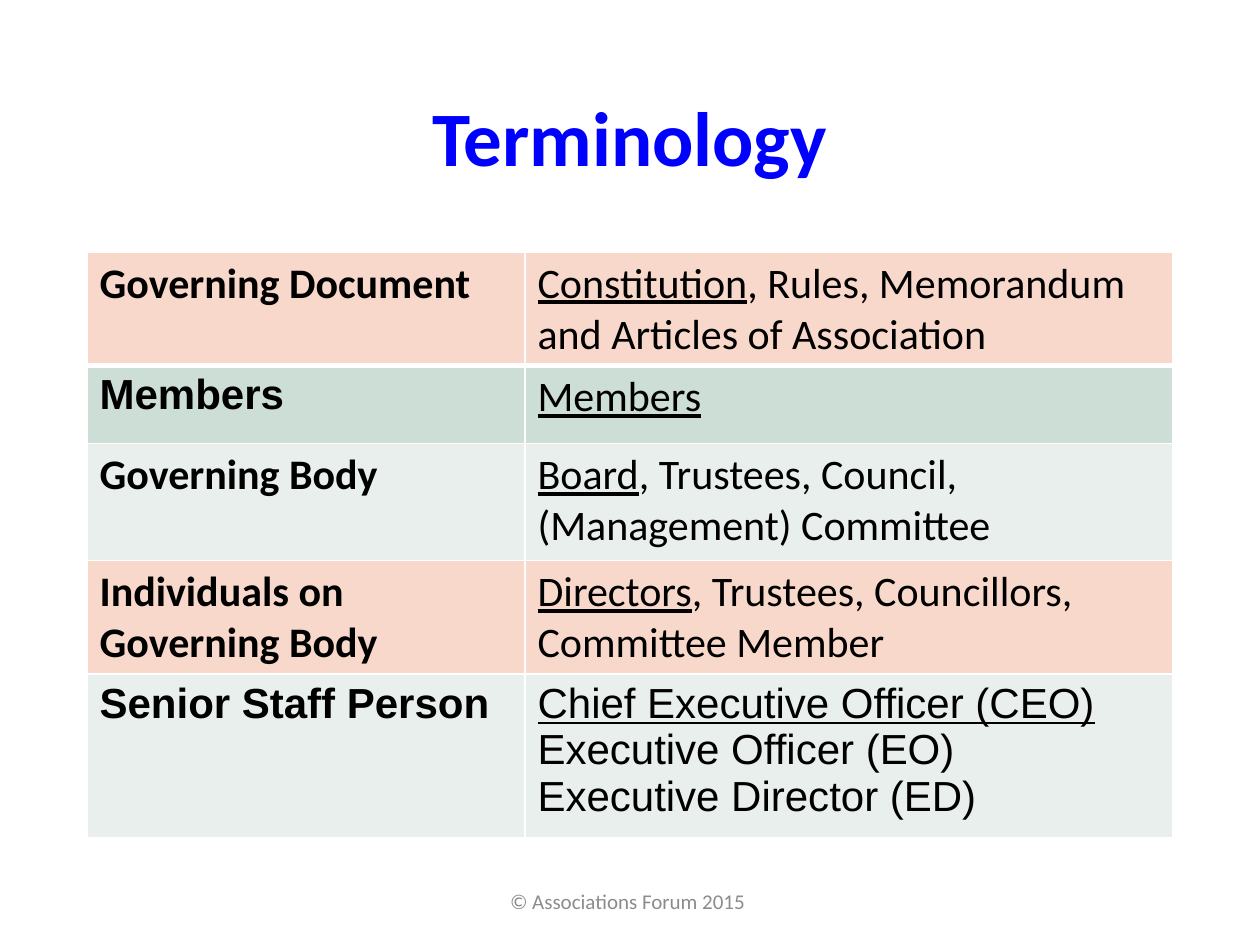
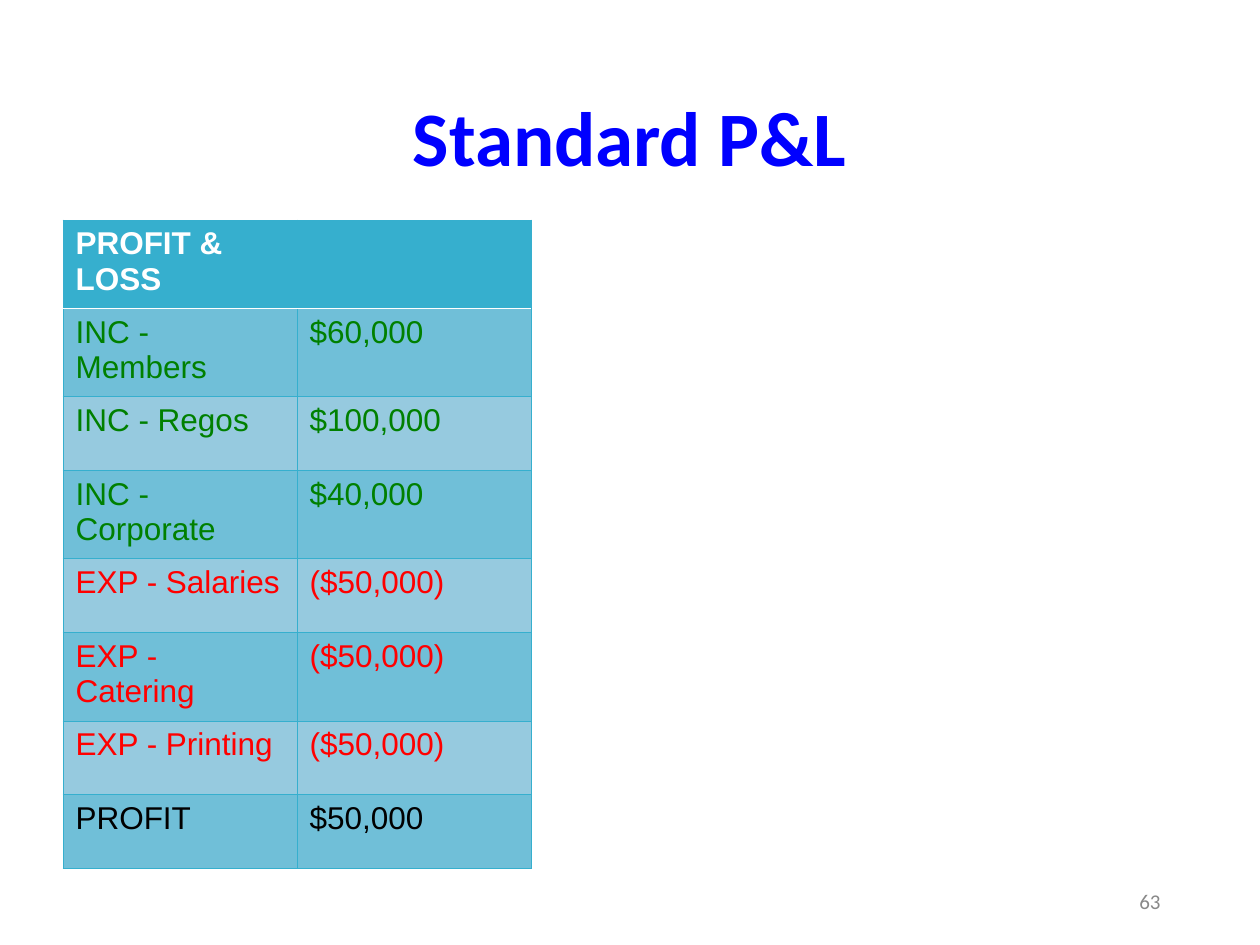
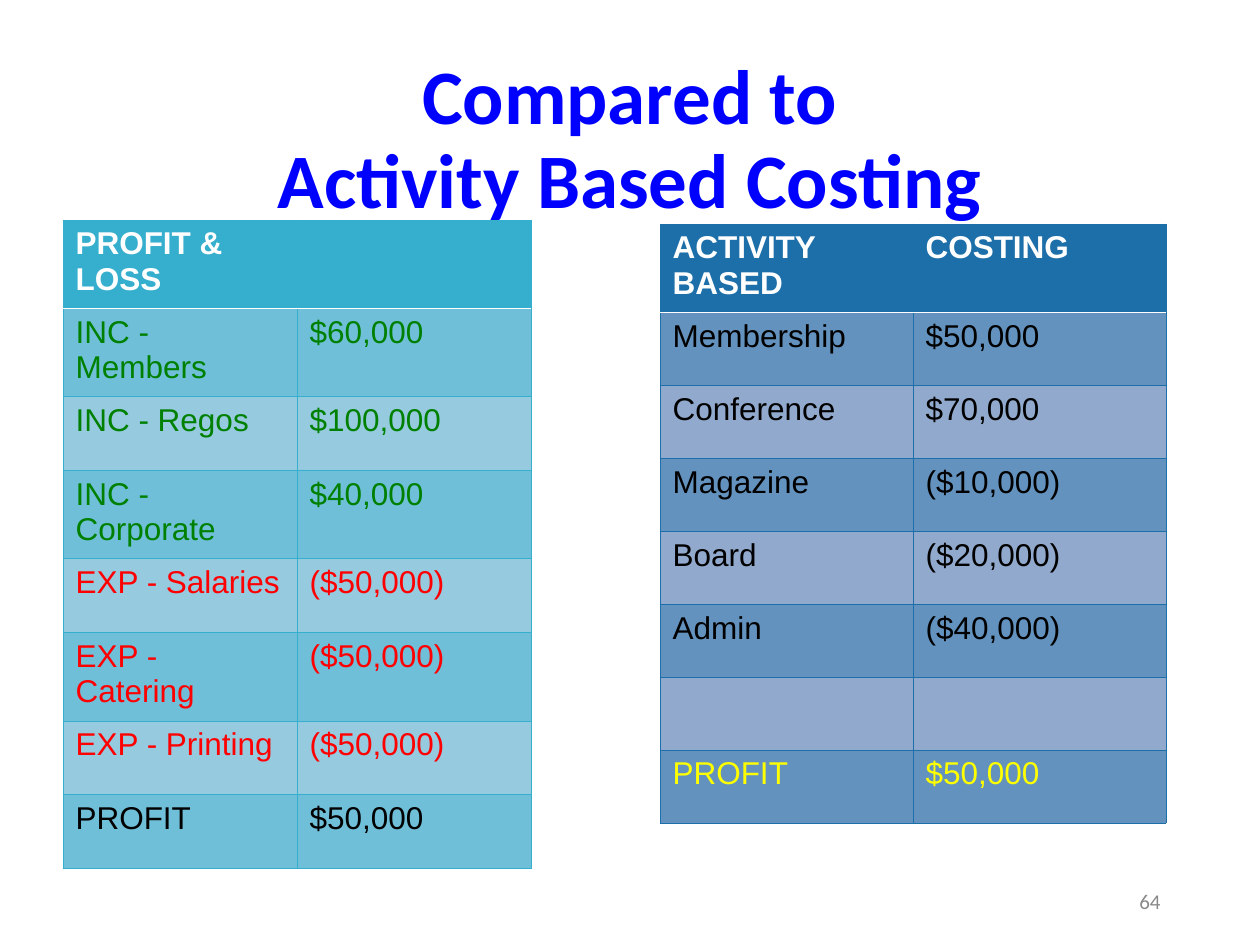
"""Builds three slides on association terminology and activity based costing."""
from dataclasses import dataclass

from lxml.etree import SubElement
from pptx import Presentation
from pptx.dml.color import RGBColor as RGB
from pptx.enum.text import MSO_ANCHOR as ANCHOR, PP_ALIGN as ALIGN
from pptx.oxml.ns import qn
from pptx.util import Emu, Pt

PX_PER_INCH = 126


@dataclass(frozen=True)
class Theme:
    title: str = "0000FF"
    text: str = "000000"
    white: str = "FFFFFF"
    copyright: str = "8C8C8C"
    number: str = "898989"
    income: str = "008000"
    expense: str = "FF0000"
    profit: str = "FFFF00"
    peach: str = "F8D8CA"
    sage: str = "CDDED6"
    mist: str = "E8EFEC"
    teal: tuple = ("36AFCE", "70BFD8", "96CADF")
    blue: tuple = ("1D6FA9", "6392BE", "91A9CC")
    head_font: str = "Calibri"
    body_font: str = "Arial"
    title_size: int = 44
    term_size: int = 24
    money_size: int = 18
    footer_size: int = 12


T = Theme()

TERMS = [
    (113, T.peach, T.head_font, "Governing Document", T.head_font,
     [("Constitution", ", Rules, Memorandum and Articles of Association")]),
    (78, T.sage, T.body_font, "Members", T.head_font, [("Members", "")]),
    (117, T.mist, T.head_font, "Governing Body", T.head_font,
     [("Board", ", Trustees, Council, (Management) Committee")]),
    (113, T.peach, T.head_font, "Individuals on Governing Body", T.head_font,
     [("Directors", ", Trustees, Councillors, Committee Member")]),
    (164, T.mist, T.body_font, "Senior Staff Person", T.body_font,
     [("Chief Executive Officer (CEO)", ""), ("", "Executive Officer (EO)"),
      ("", "Executive Director (ED)")]),
]

PROFIT_LOSS = [
    ("PROFIT & LOSS", "", T.white),
    ("INC - Members", "$60,000", T.income),
    ("INC - Regos", "$100,000", T.income),
    ("INC - Corporate", "$40,000", T.income),
    ("EXP - Salaries", "($50,000)", T.expense),
    ("EXP - Catering", "($50,000)", T.expense),
    ("EXP - Printing", "($50,000)", T.expense),
    ("PROFIT", "$50,000", T.text),
]

ACTIVITY = [
    ("ACTIVITY BASED", "COSTING", T.white),
    ("Membership", "$50,000", T.text),
    ("Conference", "$70,000", T.text),
    ("Magazine", "($10,000)", T.text),
    ("Board", "($20,000)", T.text),
    ("Admin", "($40,000)", T.text),
    ("", "", T.text),
    ("PROFIT", "$50,000", T.profit),
]


def px(n):
    """Turn whole pixels into EMU."""
    return Emu(n * 914400 // PX_PER_INCH)


def write(p, text, font=T.head_font, size=T.term_size, color=T.text, bold=False, underline=False):
    """Add formatted text to a paragraph, breaking lines at newlines."""
    for i, line in enumerate(text.split("\n")):
        if i:
            p.add_line_break()
        if line:
            r = p.add_run()
            r.text = line
            f = r.font
            f.name, f.size, f.bold, f.underline = font, Pt(size), bold, underline
            f.color.rgb = RGB.from_string(color)


def add_text(s, box, text, align=ALIGN.CENTER, spacing=None, **fmt):
    """Add a vertically centred text box."""
    tf = s.shapes.add_textbox(*map(px, box)).text_frame
    tf.word_wrap = True
    tf.vertical_anchor = ANCHOR.MIDDLE
    p = tf.paragraphs[0]
    p.alignment, p.line_spacing = align, spacing
    write(p, text, **fmt)


def add_title(s, text):
    """Add the slide title."""
    add_text(s, (87, 50, 1086, 183), text, spacing=0.9,
             size=T.title_size, color=T.title, bold=True)


def add_number(s, number):
    """Add the slide number at the lower right."""
    add_text(s, (890, 876, 283, 50), str(number), align=ALIGN.RIGHT,
             size=T.footer_size, color=T.number)


def add_grid(s, left, top, widths, heights):
    """Add an unbanded table with the given column widths and row heights."""
    box = map(px, (left, top, sum(widths), sum(heights)))
    table = s.shapes.add_table(len(heights), len(widths), *box).table
    table.horz_banding = False
    for col, width in zip(table.columns, widths):
        col.width = px(width)
    for row, height in zip(table.rows, heights):
        row.height = px(height)
    return table


def style_cell(cell, fill, line, width, **edges):
    """Set the cell's borders and fill; edges override single sides."""
    tc_pr = cell._tc.get_or_add_tcPr()
    for side in "LRTB":
        color, points = edges.get(side, (line, width))
        ln = SubElement(tc_pr, qn(f"a:ln{side}"), w=str(Pt(points)))
        solid = SubElement(ln, qn("a:solidFill"))
        SubElement(solid, qn("a:srgbClr"), val=color)
    cell.fill.solid()
    cell.fill.fore_color.rgb = RGB.from_string(fill)


def add_terms(s):
    """Add the table of terms and their alternatives."""
    table = add_grid(s, 87, 252, (438, 648), [term[0] for term in TERMS])
    rule = (T.white, 3)
    for i, (_, fill, label_font, label, font, lines) in enumerate(TERMS):
        edges = {0: {"B": rule}, 1: {"T": rule}}.get(i, {})
        for cell in table.rows[i].cells:
            style_cell(cell, fill, T.white, 1, **edges)
        write(table.cell(i, 0).text_frame.paragraphs[0], label, font=label_font, bold=True)
        tf = table.cell(i, 1).text_frame
        for j, (preferred, others) in enumerate(lines):
            p = tf.add_paragraph() if j else tf.paragraphs[0]
            write(p, preferred, font=font, underline=True)
            write(p, others, font=font)


def add_accounts(s, left, top, col_width, row_height, shades, rows):
    """Add a two-column table of amounts with a header and banded rows."""
    accent, dark, light = shades
    table = add_grid(s, left, top, [col_width] * 2, [row_height] * len(rows))
    rule = (T.white, 1)
    for i, (label, amount, color) in enumerate(rows):
        fill = accent if i == 0 else dark if i % 2 else light
        edges = {0: {"B": rule}, 1: {"T": rule}}.get(i, {})
        for cell, text in zip(table.rows[i].cells, (label, amount)):
            style_cell(cell, fill, accent, 0.5, **edges)
            write(cell.text_frame.paragraphs[0], text, font=T.body_font,
                  size=T.money_size, color=color, bold=i == 0)


def add_profit_loss(s):
    """Add the profit and loss table."""
    add_accounts(s, 63, 220, 234, 74, T.teal, PROFIT_LOSS)


def main():
    """Build the slides and save them."""
    prs = Presentation()
    prs.slide_width, prs.slide_height = px(1260), px(945)
    terms, standard, compared = (prs.slides.add_slide(prs.slide_layouts[6]) for _ in range(3))

    add_title(terms, "Terminology")
    add_terms(terms)
    add_text(terms, (417, 876, 426, 50), "© Associations Forum 2015 ",
             size=T.footer_size, color=T.copyright)

    add_title(standard, "Standard P&L")
    add_number(standard, 63)
    add_profit_loss(standard)

    add_title(compared, "Compared to\nActivity Based Costing")
    add_number(compared, 64)
    add_profit_loss(compared)
    add_accounts(compared, 660, 224, 253, 73, T.blue, ACTIVITY)

    prs.save("out.pptx")


if __name__ == "__main__":
    main()
